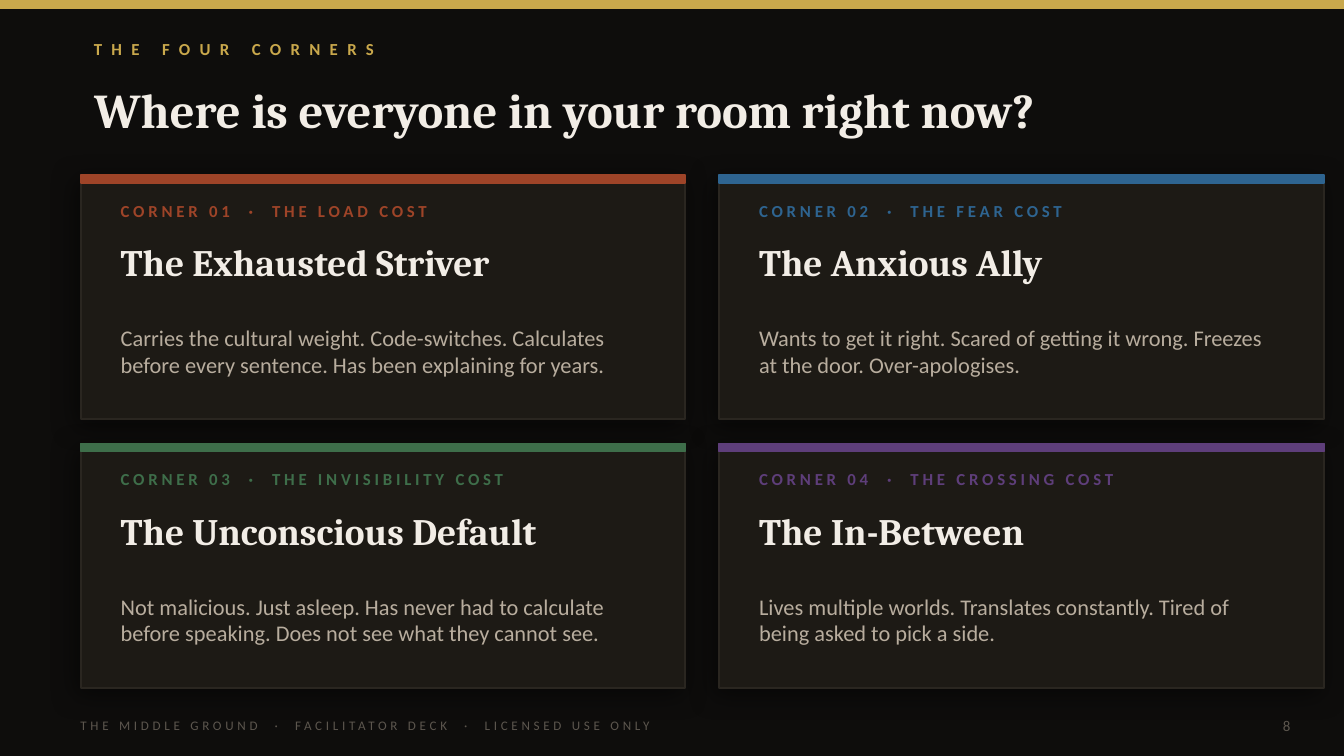
from lxml import etree
from pptx import Presentation
from pptx.dml import color
from pptx.enum import shapes, text
from pptx.oxml import ns
from pptx.util import Pt

GOLD, CREAM, SAND, GREY = "C9A84C", "F2EDE6", "B8AD9E", "5C564E"
BACKGROUND, CARD_FILL, CARD_EDGE = "0E0D0C", "1D1A15", "2A2620"
SANS, SERIF = "Calibri", "Cambria"
LEFT, TOP = 43.2, 93.6
COLUMN_STEP, ROW_STEP = 342, 144
CARD_WIDTH, CARD_HEIGHT, BAR_HEIGHT = 324, 131.04, 4.32

CORNERS = [
    ("9E4428", "THE LOAD COST", "The Exhausted Striver",
     "Carries the cultural weight. Code-switches. Calculates before every "
     "sentence. Has been explaining for years."),
    ("2E6490", "THE FEAR COST", "The Anxious Ally",
     "Wants to get it right. Scared of getting it wrong. Freezes at the door. "
     "Over-apologises."),
    ("3E6E4A", "THE INVISIBILITY COST", "The Unconscious Default",
     "Not malicious. Just asleep. Has never had to calculate before speaking. "
     "Does not see what they cannot see."),
    ("5E3E7A", "THE CROSSING COST", "The In-Between",
     "Lives multiple worlds. Translates constantly. Tired of being asked to "
     "pick a side."),
]


def rgb(value):
    return color.RGBColor.from_string(value)


def write(box, words, size, hue, face=SANS, bold=False, spacing=0,
          align=text.PP_ALIGN.LEFT):
    frame = box.text_frame
    frame.text = words
    frame.word_wrap = True
    frame.auto_size = text.MSO_AUTO_SIZE.NONE
    frame.vertical_anchor = text.MSO_ANCHOR.MIDDLE
    para = frame.paragraphs[0]
    para.alignment = align
    span = para.runs[0]
    span.font.name = face
    span.font.size = Pt(size)
    span.font.bold = bold
    span.font.color.rgb = rgb(hue)
    if spacing:
        span._r.get_or_add_rPr().set("spc", str(spacing * 100))


def add_text(page, left, top, width, height, words, size, hue, **style):
    box = page.shapes.add_textbox(Pt(left), Pt(top), Pt(width), Pt(height))
    write(box, words, size, hue, **style)


def add_title(page, words):
    title = page.shapes.title
    title.left, title.top = Pt(LEFT), Pt(39.6)
    title.width, title.height = Pt(633.6), Pt(37.44)
    write(title, words, 26, CREAM, face=SERIF, bold=True)


def add_rect(page, left, top, width, height, fill, edge):
    rect = page.shapes.add_shape(shapes.MSO_SHAPE.RECTANGLE, Pt(left), Pt(top),
                                 Pt(width), Pt(height))
    rect.shadow.inherit = False
    rect.fill.solid()
    rect.fill.fore_color.rgb = rgb(fill)
    rect.line.color.rgb = rgb(edge)
    rect.line.width = Pt(1)
    return rect


def add_shadow(rect):
    effects = rect.element.spPr.find(ns.qn("a:effectLst"))
    shadow = etree.SubElement(effects, ns.qn("a:outerShdw"), blurRad=str(Pt(14)),
                              dist=str(Pt(4)), dir=str(135 * 60000),
                              algn="bl", rotWithShape="0")
    tint = etree.SubElement(shadow, ns.qn("a:srgbClr"), val="000000")
    etree.SubElement(tint, ns.qn("a:alpha"), val="50000")


def add_card(page, index, hue, cost, name, description):
    row, column = divmod(index, 2)
    left, top = LEFT + column * COLUMN_STEP, TOP + row * ROW_STEP
    inner = left + 14.4
    add_shadow(add_rect(page, left, top, CARD_WIDTH, CARD_HEIGHT,
                        CARD_FILL, CARD_EDGE))
    add_rect(page, left, top, CARD_WIDTH, BAR_HEIGHT, hue, hue)
    add_text(page, inner, top + 10.08, 288, 18,
             f"CORNER {index + 1:02d}  ·  {cost}", 9, hue, bold=True, spacing=2)
    add_text(page, inner, top + 30.24, 288, 32.4, name, 20, CREAM,
             face=SERIF, bold=True)
    add_text(page, inner, top + 64.8, 295.2, 59.04, description, 12, SAND)


def main():
    deck = Presentation()
    deck.slide_width, deck.slide_height = Pt(720), Pt(405)
    page = deck.slides.add_slide(deck.slide_layouts[5])
    page.background.fill.solid()
    page.background.fill.fore_color.rgb = rgb(BACKGROUND)

    add_rect(page, 0, 0, 720, BAR_HEIGHT, GOLD, GOLD)
    add_text(page, LEFT, 14.4, 633.6, 23.04, "THE FOUR CORNERS", 9, GOLD,
             bold=True, spacing=5)
    add_title(page, "Where is everyone in your room right now?")
    for index, corner in enumerate(CORNERS):
        add_card(page, index, *corner)
    add_text(page, 36, 381.6, 540, 14.4,
             "THE MIDDLE GROUND  ·  FACILITATOR DECK  ·  LICENSED USE ONLY",
             7, GREY, spacing=2)
    add_text(page, 655.2, 381.6, 43.2, 14.4, "8", 8, GREY,
             align=text.PP_ALIGN.RIGHT)
    deck.save("out.pptx")


if __name__ == "__main__":
    main()
